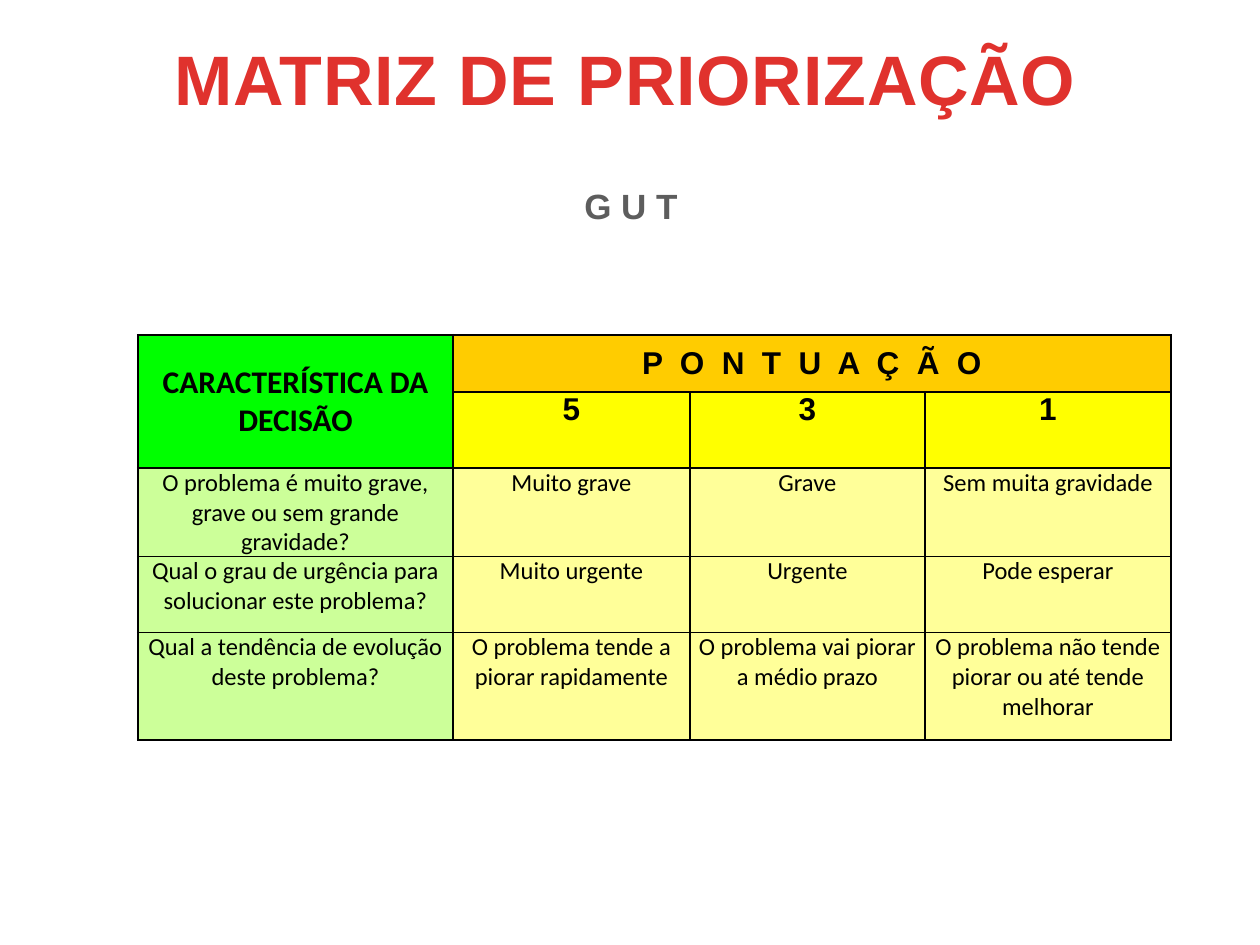
import pptx
import pptx.util
import pptx.dml.color
import pptx.enum.text
import pptx.oxml.ns
from lxml import etree

RGBColor = pptx.dml.color.RGBColor
RED = RGBColor(0xE0, 0x32, 0x2D)
GRAY = RGBColor(0x5D, 0x5D, 0x5D)
BLACK = RGBColor(0, 0, 0)
GREEN = RGBColor(0, 0xFF, 0)
LIGHT_GREEN = RGBColor(0xCC, 0xFF, 0x99)
ORANGE = RGBColor(0xFF, 0xCC, 0)
YELLOW = RGBColor(0xFF, 0xFF, 0)
LIGHT_YELLOW = RGBColor(0xFF, 0xFF, 0x99)

# Content: headings as text, box (px), size, colour, letter spacing (pt)
HEADINGS = [
    ("MATRIZ DE PRIORIZAÇÃO", (157, 29, 937, 97), 40, RED, 0.5),
    ("G U T", (571, 178, 120, 55), 20, GRAY, 0),
]
CORNER = "CARACTERÍSTICA DA DECISÃO"
SCORE_TITLE = "P O N T U A Ç Ã O"
SCORES = ["5", "3", "1"]
CRITERIA = [
    ("O problema é muito grave, grave ou sem grande gravidade?",
     "Muito grave", "Grave", "Sem muita gravidade"),
    ("Qual o grau de urgência para solucionar este problema?",
     "Muito urgente", "Urgente", "Pode esperar"),
    ("Qual a tendência de evolução deste problema?",
     "O problema tende a piorar rapidamente",
     "O problema vai piorar a médio prazo",
     "O problema não tende piorar ou até tende melhorar"),
]
TABLE_LEFT, TABLE_TOP = 138, 335
COLUMNS = [315, 237, 235, 246]
ROWS = [57, 76, 88, 76, 108]


def px(n):
    return pptx.util.Emu(round(n * 914400 / 126))


def write(frame, text, size, font, color, bold, spacing=0):
    paragraph = frame.paragraphs[0]
    paragraph.alignment = pptx.enum.text.PP_ALIGN.CENTER
    run = paragraph.add_run()
    run.text = text
    run.font.size = pptx.util.Pt(size)
    run.font.name = font
    run.font.bold = bold
    run.font.color.rgb = color
    if spacing:
        run.font._element.set("spc", str(round(spacing * 100)))


def set_borders(cell, row, col):
    """Thick lines on the outer edge of the table, thin ones inside."""
    outer = {"L": col == 0, "R": col == len(COLUMNS) - 1,
             "T": row == 0, "B": row == len(ROWS) - 1}
    qn = pptx.oxml.ns.qn
    properties = cell._tc.get_or_add_tcPr()
    for position, (side, thick) in enumerate(outer.items()):
        line = etree.Element(qn(f"a:ln{side}"),
                             w=str(pptx.util.Pt(1.5 if thick else 1)))
        fill = etree.SubElement(line, qn("a:solidFill"))
        etree.SubElement(fill, qn("a:srgbClr"), val=str(BLACK))
        properties.insert(position, line)


def fill_cell(row, col, text, fill, size=14, font="Calibri", bold=False,
              middle=False, spacing=0):
    cell = matrix.cell(row, col)
    cell.fill.solid()
    cell.fill.fore_color.rgb = fill
    anchor = pptx.enum.text.MSO_ANCHOR
    cell.vertical_anchor = anchor.MIDDLE if middle else anchor.TOP
    cell.margin_left = cell.margin_right = px(6)
    cell.margin_top = cell.margin_bottom = 0
    write(cell.text_frame, text, size, font, BLACK, bold, spacing)


deck = pptx.Presentation()
deck.slide_width, deck.slide_height = px(1260), px(945)
slide = deck.slides.add_slide(deck.slide_layouts[6])

# Headings
for text, box, size, color, spacing in HEADINGS:
    heading = slide.shapes.add_textbox(*map(px, box)).text_frame
    heading.word_wrap = False
    write(heading, text, size, "Arial", color, True, spacing)

# Table grid
matrix = slide.shapes.add_table(
    len(ROWS), len(COLUMNS), px(TABLE_LEFT), px(TABLE_TOP),
    px(sum(COLUMNS)), px(sum(ROWS))).table
matrix.first_row = matrix.horz_banding = False
for column, width in zip(matrix.columns, COLUMNS):
    column.width = px(width)
for row, height in zip(matrix.rows, ROWS):
    row.height = px(height)
matrix.cell(0, 0).merge(matrix.cell(1, 0))
matrix.cell(0, 1).merge(matrix.cell(0, 3))

# Header cells
fill_cell(0, 0, CORNER, GREEN, 18, bold=True, middle=True)
fill_cell(0, 1, SCORE_TITLE, ORANGE, 18, "Arial", True, True, 2.5)
for c, score in enumerate(SCORES, 1):
    fill_cell(1, c, score, YELLOW, 18, "Arial", True)

# Criteria rows
for r, criterion in enumerate(CRITERIA, 2):
    for c, text in enumerate(criterion):
        fill_cell(r, c, text, LIGHT_YELLOW if c else LIGHT_GREEN)

# Borders
for r in range(len(ROWS)):
    for c in range(len(COLUMNS)):
        set_borders(matrix.cell(r, c), r, c)

deck.save("out.pptx")
